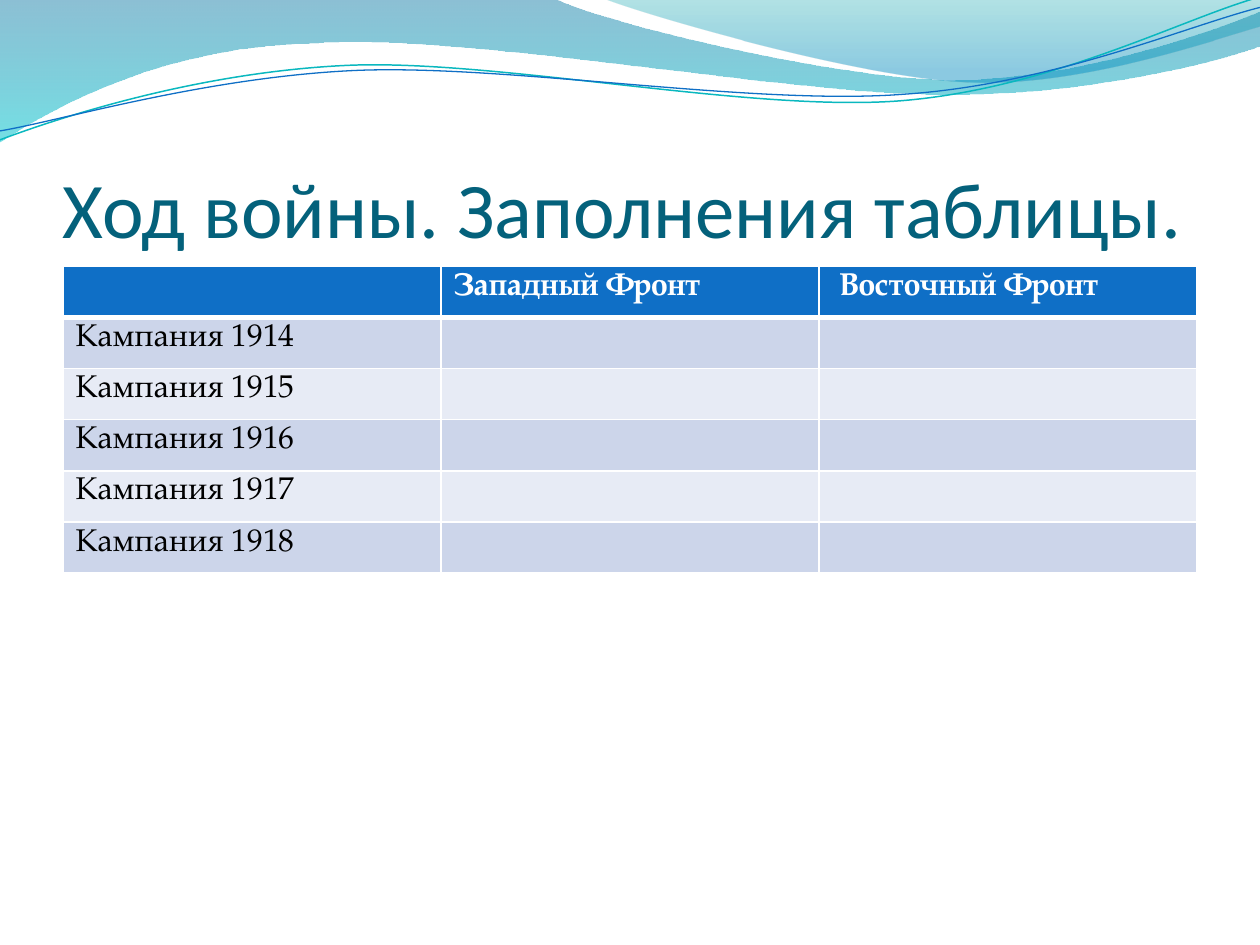
from dataclasses import dataclass

from lxml.etree import SubElement
from pptx import Presentation
from pptx.dml.color import RGBColor as RGB
from pptx.enum.text import MSO_ANCHOR as Anchor
from pptx.oxml.ns import qn
from pptx.util import Cm, Pt


@dataclass(frozen=True)
class Theme:
    heading_font: str = "Calibri"
    body_font: str = "TeX Gyre Pagella"
    heading_size: float = 45
    body_size: float = 18
    heading: str = "04617B"
    header_fill: str = "0F6FC6"
    bands: tuple = ("CCD5EA", "E7EBF5")
    white: str = "FFFFFF"
    black: str = "000000"
    teal_line: str = "0AB8BF"
    blue_line: str = "0F6FC6"
    wide_wave: tuple = ((0, "0074A1", 45), (1, "00C6CF", 55))
    right_wave: tuple = ((0, "00A1A9", 30), (0.8, "008BBF", 45))


class SlideBuilder:
    def __init__(self, slide, theme):
        self.slide = slide
        self.theme = theme

    def outline(self, start, segments, closed):
        points = [(Cm(x), Cm(y)) for segment in segments for x, y in segment]
        builder = self.slide.shapes.build_freeform(Cm(start[0]), Cm(start[1]))
        builder.add_line_segments(points, close=closed)
        shape = builder.convert_to_shape()
        shape.shadow.inherit = False
        steps = iter(list(shape.element.iter(qn("a:lnTo"))))
        for segment in segments:
            step = next(steps)
            if len(segment) == 3:
                step.tag = qn("a:cubicBezTo")
                for _ in range(2):
                    control = next(steps)
                    step.append(control[0])
                    control.getparent().remove(control)
        return shape

    def wave(self, start, segments, stops):
        shape = self.outline(start, segments, True)
        shape.line.fill.background()
        shape.fill.gradient()
        shape.fill.gradient_angle = 270
        for stop, (position, color, _) in zip(shape.fill.gradient_stops, stops):
            stop.position = position
            stop.color.rgb = RGB.from_string(color)
        for node, (_, _, opacity) in zip(shape.element.iter(qn("a:srgbClr")), stops):
            SubElement(node, qn("a:alpha"), val=str(opacity * 1000))

    def curve(self, start, segments, color, width):
        shape = self.outline(start, segments, False)
        shape.rotation = 357.3
        shape.fill.background()
        shape.line.color.rgb = RGB.from_string(color)
        shape.line.width = Pt(width)

    def style(self, paragraph, font, size, color, bold=False):
        paragraph.font.name = font
        paragraph.font.size = Pt(size)
        paragraph.font.bold = bold
        paragraph.font.color.rgb = RGB.from_string(color)

    def title(self, text, left, top, width, height):
        frame = self.slide.shapes.add_textbox(
            Cm(left), Cm(top), Cm(width), Cm(height)).text_frame
        frame.word_wrap = True
        frame.vertical_anchor = Anchor.BOTTOM
        frame.margin_left = frame.margin_right = frame.margin_bottom = 0
        frame.text = text
        self.style(frame.paragraphs[0], self.theme.heading_font,
                   self.theme.heading_size, self.theme.heading)

    def borders(self, cell, widths):
        properties = cell._tc.get_or_add_tcPr()
        for side, width in widths.items():
            line = SubElement(properties, qn(f"a:ln{side}"), w=str(Pt(width)))
            fill = SubElement(line, qn("a:solidFill"))
            SubElement(fill, qn("a:srgbClr"), val=self.theme.white)

    def table(self, rows, left, top, width, row_height):
        theme = self.theme
        table = self.slide.shapes.add_table(
            len(rows), len(rows[0]), Cm(left), Cm(top),
            Cm(width), Cm(row_height * len(rows))).table
        table.horz_banding = False
        for r, texts in enumerate(rows):
            header = r == 0
            fill = theme.header_fill if header else theme.bands[(r - 1) % 2]
            color = theme.white if header else theme.black
            widths = {"L": 1, "R": 1, "T": 3 if r == 1 else 1, "B": 3 if header else 1}
            for c, text in enumerate(texts):
                cell = table.cell(r, c)
                self.borders(cell, widths)
                cell.fill.solid()
                cell.fill.fore_color.rgb = RGB.from_string(fill)
                if text:
                    cell.text = text
                self.style(cell.text_frame.paragraphs[0], theme.body_font,
                           theme.body_size, color, header)


def main():
    deck = Presentation()
    deck.slide_width, deck.slide_height = Cm(25.4), Cm(19.05)
    theme = Theme()
    page = SlideBuilder(deck.slides.add_slide(deck.slide_layouts[6]), theme)

    page.wave((0, 0), [
        [(11.18, -0.03)],
        [(12.09, 0.43), (16.87, 1.6), (19.25, 1.6)],
        [(21.67, 1.6), (24.33, 0.66), (25.4, 0.23)],
        [(25.43, 0.91)],
        [(24.97, 1.12), (22.1, 1.93), (18.95, 1.9)],
        [(15.8, 1.9), (9.7, 0.71), (6.53, 0.86)],
        [(3.28, 0.91), (1.17, 2.11), (-0.03, 2.87)],
        [(0, 0)],
    ], theme.wide_wave)
    page.wave((12.17, -0.03), [
        [(12.93, 0.28), (17.32, 1.57), (19.53, 1.65)],
        [(21.74, 1.75), (24.41, 0.81), (25.4, 0.53)],
        [(25.4, 0)],
        [(12.17, -0.03)],
    ], theme.right_wave)
    page.curve((-0.05, 2.22), [
        [(1.19, 1.82), (4.02, 1.04), (7.05, 1.05)],
        [(10.05, 1.07), (15.02, 2.37), (18.08, 2.29)],
        [(21.13, 2.2), (23.86, 0.91), (25.41, 0.55)],
    ], theme.teal_line, 0.85)
    page.curve((-0.04, 2.04), [
        [(1.16, 1.9), (4.17, 1.15), (7.2, 1.16)],
        [(10.25, 1.18), (15.13, 2.25), (18.19, 2.16)],
        [(21.21, 2.1), (23.93, 1.06), (25.45, 0.75)],
    ], theme.blue_line, 0.75)

    page.title("Ход войны. Заполнения таблицы.", 1.27, 1.95, 22.86, 3.18)
    campaigns = [(f"Кампания {year}", "", "") for year in range(1914, 1919)]
    page.table([("", "Западный Фронт", " Восточный Фронт"), *campaigns],
               1.27, 5.37, 22.86, 1.03)
    deck.save("out.pptx")


if __name__ == "__main__":
    main()
